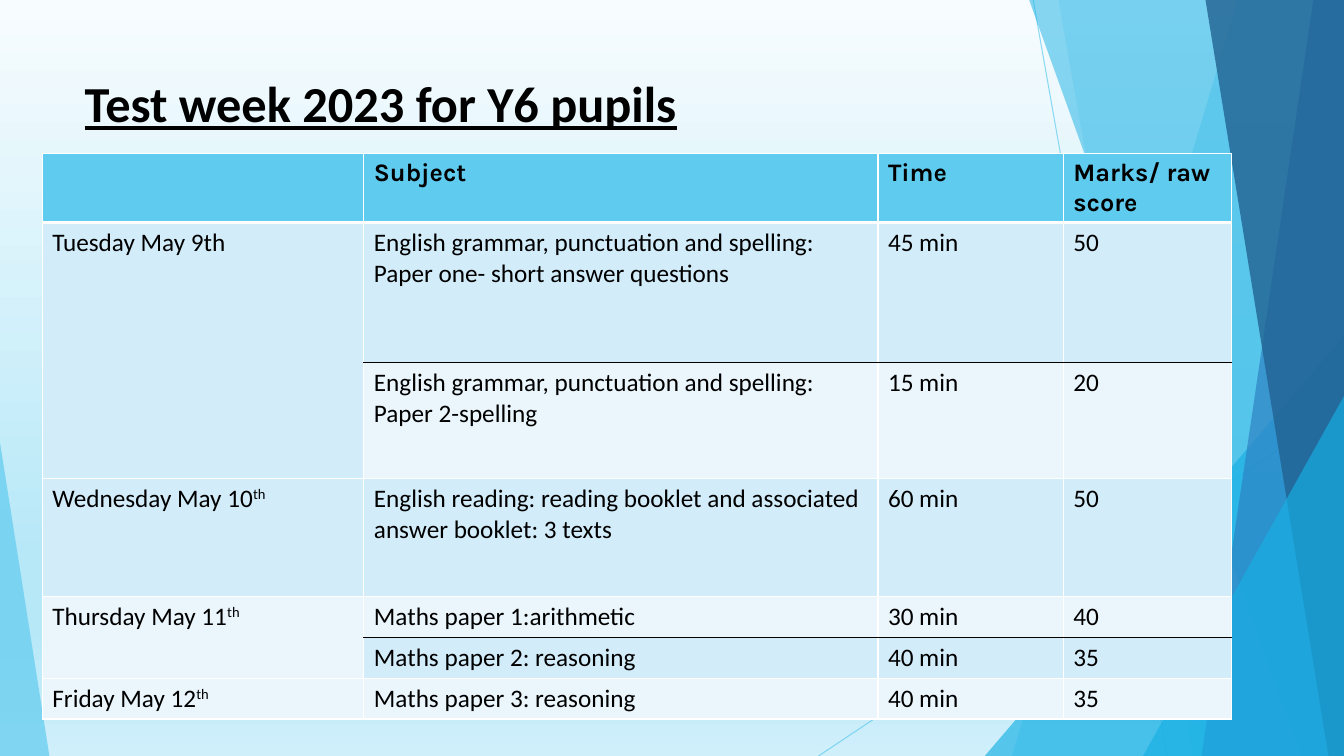
import pptx
import pptx.util
import pptx.dml.color
import pptx.enum.shapes
import pptx.enum.text
import pptx.oxml.ns
from lxml import etree

Pt = pptx.util.Pt
RGB = pptx.dml.color.RGBColor
qn = pptx.oxml.ns.qn

SKY = RGB(0x5F, 0xCB, 0xEF)
CYAN = RGB(0x17, 0xB0, 0xE4)
BLUE = RGB(0x2E, 0x83, 0xC3)
NAVY = RGB(0x22, 0x62, 0x92)
PALE = RGB(0xD2, 0xEC, 0xF9)
LIGHT = RGB(0xEA, 0xF6, 0xFC)
WHITE = RGB(0xFF, 0xFF, 0xFF)
BLACK = RGB(0x00, 0x00, 0x00)
GLOW = [(0, RGB(0xF7, 0xFC, 0xFE)), (74, RGB(0xB7, 0xE8, 0xF8)),
        (83, RGB(0xB7, 0xE8, 0xF8)), (100, RGB(0xCF, 0xEF, 0xFA))]


def fade(fill, alpha):
    for tint in fill._xPr.iter(qn("a:srgbClr")):
        etree.SubElement(tint, qn("a:alpha")).set("val", str(alpha * 1000))


def style(run, form):
    for key, value in form.items():
        setattr(run.font, key, value)
    run.font.color.rgb = BLACK


deck = pptx.Presentation()
deck.slide_width, deck.slide_height = Pt(960), Pt(540)
slide = deck.slides.add_slide(deck.slide_layouts[5])
shapes = slide.shapes

back = slide.background.fill
back.gradient()
back.gradient_angle = 270
stops = back._xPr.find(".//" + qn("a:gsLst"))
for stop in list(stops):
    stops.remove(stop)
for place, tint in GLOW:
    stop = etree.SubElement(stops, qn("a:gs"), pos=str(place * 1000))
    etree.SubElement(stop, qn("a:srgbClr"), val=str(tint))

for ends in [(738, 0, 833.76, 540), (960, 290.16, 584.64, 540)]:
    ray = shapes.add_connector(pptx.enum.shapes.MSO_CONNECTOR.STRAIGHT,
                               *[Pt(end) for end in ends])
    ray.line.color.rgb = SKY
    ray.line.width = Pt(0.75)
    fade(ray.line.fill, 70)
    etree.SubElement(ray._element.spPr, qn("a:effectLst"))

facets = [
    ("band", (884.16, 722.88), SKY, 36),
    ("band", (756, 851.76), SKY, 20),
    ("wedge", (703.44, 239.76, 256.56, 300.24, 1), CYAN, 66),
    ("band", (735.12, 929.52), CYAN, 50),
    ("band", (938.16, 858.24), BLUE, 70),
    ("band", (861.12, 948.96), NAVY, 80),
    ("wedge", (816.48, 282.96, 143.52, 257.04, 1), CYAN, 66),
    ("wedge", (0, 316.08, 35.28, 223.92, 0), SKY, 70),
]
for kind, form, tint, alpha in facets:
    if kind == "band":
        top, foot = form
        path = shapes.build_freeform(Pt(top), 0)
        path.add_line_segments([(Pt(960), 0), (Pt(960), Pt(540)), (Pt(foot), Pt(540))])
        facet = path.convert_to_shape()
    else:
        facet = shapes.add_shape(pptx.enum.shapes.MSO_SHAPE.ISOSCELES_TRIANGLE,
                                 *[Pt(side) for side in form[:4]])
        facet.adjustments[0] = form[4]
    facet.shadow.inherit = False
    facet.fill.solid()
    facet.fill.fore_color.rgb = tint
    fade(facet.fill, alpha)
    facet.line.fill.background()

title = shapes.title
shapes._spTree.append(title._element)
for key, value in {"left": 53.28, "top": 48.24, "width": 676.8, "height": 103.68}.items():
    setattr(title, key, Pt(value))
frame = title.text_frame
for key, value in {"word_wrap": True,
                   "auto_size": pptx.enum.text.MSO_AUTO_SIZE.NONE,
                   "vertical_anchor": pptx.enum.text.MSO_ANCHOR.TOP}.items():
    setattr(frame, key, value)
line = frame.paragraphs[0]
line.alignment = pptx.enum.text.PP_ALIGN.LEFT
run = line.add_run()
run.text = "Test week 2023 for Y6 pupils"
style(run, {"name": "Calibri", "size": Pt(36), "bold": True, "underline": True})

rows = [
    ("", "Subject", "Time", "Marks/ raw score"),
    ("Tuesday May 9th", "English grammar, punctuation and spelling: Paper one- short answer questions",
     "45 min", "50"),
    ("", "English grammar, punctuation and spelling: Paper 2-spelling", "15 min", "20"),
    ("Wednesday May 10^th", "English reading: reading booklet and associated answer booklet: 3 texts",
     "60 min", "50"),
    ("Thursday May 11^th", "Maths paper 1:arithmetic", "30 min", "40"),
    ("", "Maths paper 2: reasoning", "40 min", "35"),
    ("Friday May 12^th", "Maths paper 3: reasoning", "40 min", "35"),
]
widths = [229.68, 367.2, 132.48, 120.24]
heights = [25.2, 100.08, 82.8, 84.24, 25.2, 25.2, 25.2]
splits = (1, 4)
HEAD = {"name": "Karla", "size": Pt(18), "bold": True}
BODY = {"name": "Calibri", "size": Pt(18), "bold": False}

table = shapes.add_table(len(rows), len(widths), Pt(30.24), Pt(109.44),
                         Pt(sum(widths)), Pt(sum(heights))).table
for column, width in zip(table.columns, widths):
    column.width = Pt(width)
for row, height in zip(table.rows, heights):
    row.height = Pt(height)
for r, texts in enumerate(rows):
    for c, text in enumerate(texts):
        cell = table.cell(r, c)
        edges = {"L": (WHITE, 1), "R": (WHITE, 1), "T": (WHITE, 1), "B": (WHITE, 1)}
        if r == 0:
            edges["B"] = (WHITE, 3)
        if r == 1:
            edges["T"] = (WHITE, 3)
        if c and r in splits:
            edges["B"] = (BLACK, 1)
        if c and r - 1 in splits:
            edges["T"] = (BLACK, 1)
        props = cell._tc.get_or_add_tcPr()
        for side, (tint, size) in edges.items():
            edge = etree.SubElement(props, qn("a:ln" + side), w=str(Pt(size)))
            paint = etree.SubElement(edge, qn("a:solidFill"))
            etree.SubElement(paint, qn("a:srgbClr"), val=str(tint))
        cell.fill.solid()
        cell.fill.fore_color.rgb = SKY if r == 0 else PALE if r % 2 else LIGHT
        for n, part in enumerate(text.split("^") if text else []):
            run = cell.text_frame.paragraphs[0].add_run()
            run.text = part
            style(run, BODY if r else HEAD)
            if n:
                run.font._element.set("baseline", "30000")
for r in splits:
    table.cell(r, 0).merge(table.cell(r + 1, 0))

deck.save("out.pptx")
